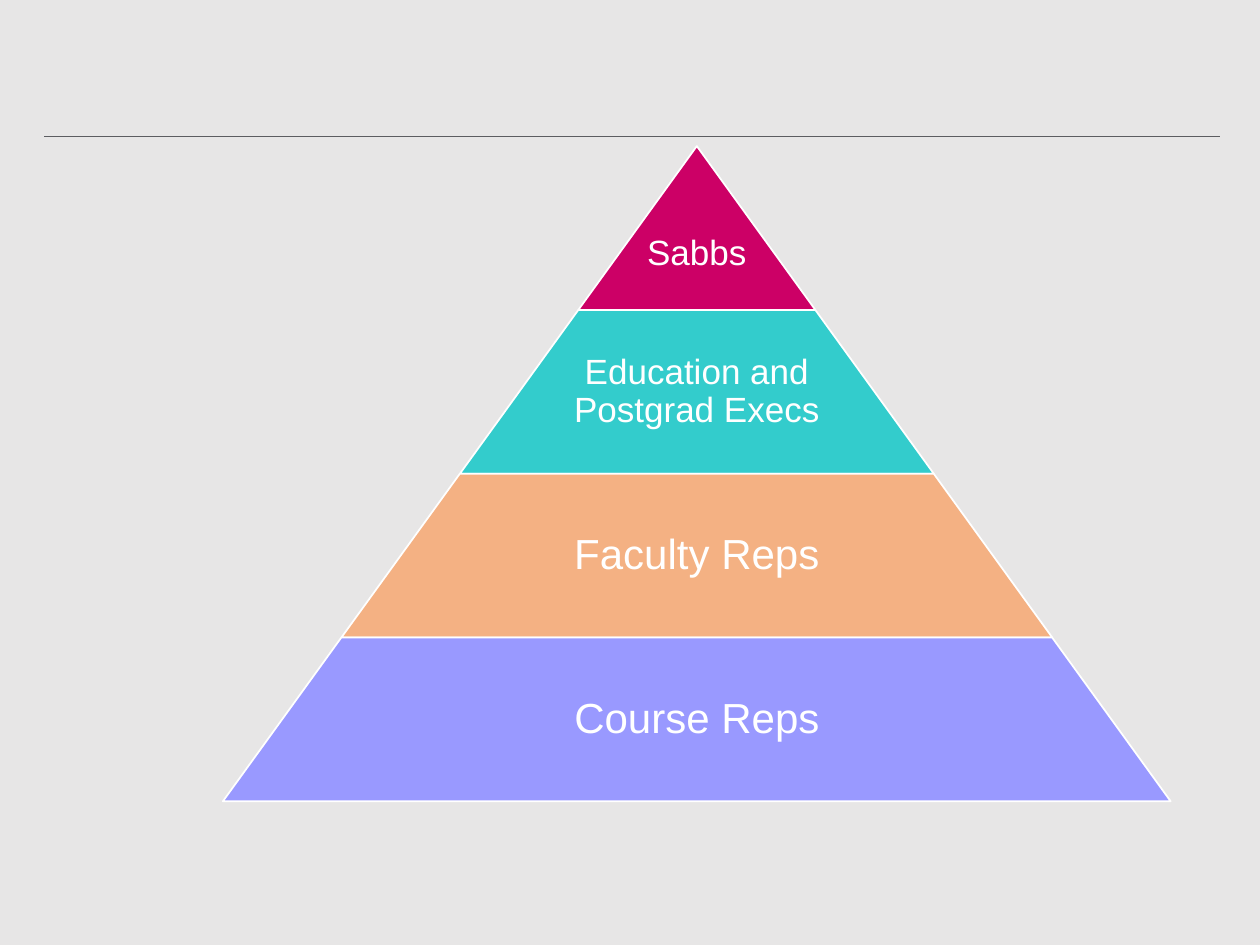
"""Build a slide with a four-tier pyramid of student representation."""
from lxml import etree
from pptx import Presentation
from pptx.dml.color import RGBColor
from pptx.enum import shapes, text
from pptx.oxml.ns import qn
from pptx.util import Pt

THEME = {
    "background": RGBColor.from_string("E7E6E6"),
    "rule": RGBColor.from_string("5C5D61"),
    "white": RGBColor.from_string("FFFFFF"),
    "tiers": ["CC0066", "33CCCC", "F4B183", "9999FF"],
    "font": "Arial",
    "small": Pt(20),
    "large": Pt(24),
}
TIERS = [
    ("Sabbs", THEME["small"], 1, 32),
    ("Education and Postgrad Execs", THEME["small"], 0.65, 2),
    ("Faculty Reps", THEME["large"], 0.65, 2),
    ("Course Reps", THEME["large"], 0.65, 2),
]
CENTER, TOP, HEIGHT, STEP = 398.2, 83.5, 93.6, 135.4


def set_format(target, values):
    for name, value in values.items():
        setattr(target, name, value)


presentation = Presentation()
set_format(presentation, {"slide_width": Pt(720), "slide_height": Pt(540)})
slide = presentation.slides.add_slide(presentation.slide_layouts[6])
slide.background.fill.solid()
slide.background.fill.fore_color.rgb = THEME["background"]

rule = slide.shapes.add_connector(
    shapes.MSO_CONNECTOR.STRAIGHT, Pt(25.2), Pt(77.8), Pt(697), Pt(77.8)
)
rule.line.color.rgb = THEME["rule"]
rule.line.width = Pt(0.5)
etree.SubElement(rule._element.spPr, qn("a:effectLst"))

for index, (label, size, text_share, top_inset) in enumerate(TIERS):
    width = STEP * (index + 1)
    top = TOP + HEIGHT * index
    tier = slide.shapes.add_shape(
        shapes.MSO_SHAPE.TRAPEZOID, Pt(CENTER - width / 2), Pt(top), Pt(width), Pt(HEIGHT)
    )
    tier.adjustments[0] = STEP / 2 / HEIGHT
    tier.shadow.inherit = False
    tier.fill.solid()
    tier.fill.fore_color.rgb = RGBColor.from_string(THEME["tiers"][index])
    tier.line.color.rgb = THEME["white"]
    tier.line.width = Pt(1)

    text_width = width * text_share
    box = slide.shapes.add_textbox(
        Pt(CENTER - text_width / 2), Pt(top), Pt(text_width), Pt(HEIGHT)
    )
    set_format(box.text_frame, {
        "word_wrap": True,
        "vertical_anchor": text.MSO_ANCHOR.MIDDLE,
        "margin_left": Pt(2),
        "margin_right": Pt(2),
        "margin_top": Pt(top_inset),
        "margin_bottom": Pt(2),
    })
    paragraph = box.text_frame.paragraphs[0]
    set_format(paragraph, {"alignment": text.PP_ALIGN.CENTER, "line_spacing": 0.9})
    run = paragraph.add_run()
    run.text = label
    set_format(run.font, {"name": THEME["font"], "size": size})
    run.font.color.rgb = THEME["white"]

presentation.save("out.pptx")
